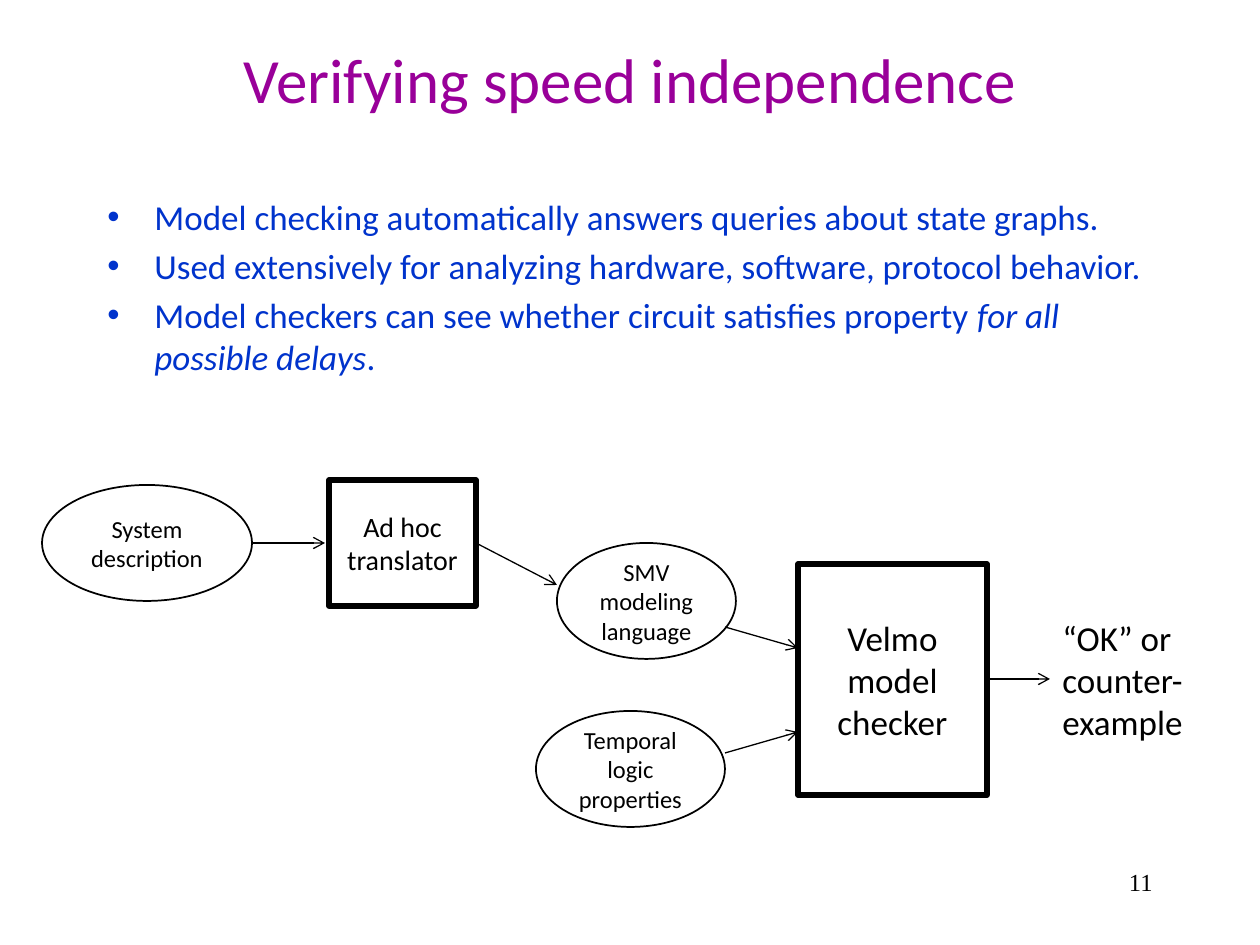
from dataclasses import dataclass

from lxml import etree
from pptx import Presentation
from pptx.dml.color import RGBColor
from pptx.enum.shapes import MSO_CONNECTOR, MSO_SHAPE
from pptx.enum.text import MSO_ANCHOR, PP_ALIGN
from pptx.oxml.ns import qn
from pptx.util import Emu, Pt

RECT, OVAL = MSO_SHAPE.RECTANGLE, MSO_SHAPE.OVAL
STRAIGHT = MSO_CONNECTOR.STRAIGHT
TOP, MIDDLE = MSO_ANCHOR.TOP, MSO_ANCHOR.MIDDLE
LEFT, CENTER, RIGHT = PP_ALIGN.LEFT, PP_ALIGN.CENTER, PP_ALIGN.RIGHT
PX = 914400 / 126


@dataclass(frozen=True)
class Theme:
    heading: RGBColor = RGBColor(0x99, 0x00, 0x99)
    bullet: RGBColor = RGBColor(0x00, 0x33, 0xCC)
    ink: RGBColor = RGBColor(0x00, 0x00, 0x00)
    font: str = "Calibri"
    number_font: str = "Times New Roman"
    title: int = 36
    body: int = 20
    tool: int = 16
    small: int = 14


theme = Theme()


def px(*lengths):
    return [Emu(round(length * PX)) for length in lengths]


def write(frame, paragraphs, size, color=theme.ink, align=LEFT, anchor=TOP, font=theme.font):
    """Fill a text frame; each paragraph is a list of (text, italic) runs."""
    frame.word_wrap = True
    frame.vertical_anchor = anchor
    for i, runs in enumerate(paragraphs):
        paragraph = frame.paragraphs[0] if i == 0 else frame.add_paragraph()
        paragraph.alignment = align
        paragraph.font.size = Pt(size)
        paragraph.font.name = font
        paragraph.font.color.rgb = color
        for text, italic in runs:
            run = paragraph.add_run()
            run.text = text
            if italic:
                run.font.italic = True


prs = Presentation()
prs.slide_width, prs.slide_height = px(1260, 945)
slide = prs.slides.add_slide(prs.slide_layouts[6])
shapes = slide.shapes

# Title, slide number and verdict
labels = [
    ("Verifying speed independence", (94, 10, 1072, 136),
     dict(size=theme.title, color=theme.heading, align=CENTER, anchor=MIDDLE)),
    ("11", (903, 861, 262, 63),
     dict(size=theme.small, align=RIGHT, font=theme.number_font)),
    ("“OK” or counter-example", (1050, 610, 157, 140), dict(size=theme.body)),
]
for text, box, style in labels:
    write(shapes.add_textbox(*px(*box)).text_frame, [[(text, False)]], **style)

# Bullets
points = [
    [("Model checking automatically answers queries about state graphs.", False)],
    [("Used extensively for analyzing hardware, software, protocol behavior.", False)],
    [("Model checkers can see whether circuit satisfies property ", False),
     ("for all possible delays", True), (".", False)],
]
body = shapes.add_textbox(*px(95, 189, 1071, 241)).text_frame
write(body, points, theme.body, theme.bullet)
indent, = px(47)
for paragraph in body.paragraphs:
    paragraph.space_before = Pt(theme.body * 0.2)
    properties = paragraph._p.get_or_add_pPr()
    properties.set("marL", str(indent))
    properties.set("indent", str(-indent))
    bullet_font = etree.Element(qn("a:buFont"), typeface="Arial")
    bullet_char = etree.Element(qn("a:buChar"), char="•")
    spacing = properties.find(qn("a:spcBef"))
    spacing.addnext(bullet_font)
    bullet_font.addnext(bullet_char)

# Tools are heavy rectangles, their inputs are thin ovals
nodes = [
    ("Ad hoc translator", RECT, (329, 480, 147, 126), theme.tool, 3),
    ("Velmo model checker", RECT, (798, 564, 189, 231), theme.body, 3),
    ("System description", OVAL, (42, 485, 210, 116), theme.small, 1),
    ("SMV modeling language", OVAL, (557, 543, 179, 116), theme.small, 1),
    ("Temporal logic properties", OVAL, (536, 711, 189, 116), theme.small, 1),
]
for text, outline, box, size, weight in nodes:
    node = shapes.add_shape(outline, *px(*box))
    node.shadow.inherit = False
    node.fill.background()
    node.line.color.rgb = theme.ink
    node.line.width = Pt(weight)
    write(node.text_frame, [[(text, False)]], size, align=CENTER, anchor=MIDDLE)

# Flow from description to verdict
flows = [
    (252, 543, 325, 543),
    (476, 543, 557, 585),
    (725, 627, 798, 648),
    (725, 753, 798, 732),
    (987, 679, 1050, 679),
]
for ends in flows:
    flow = shapes.add_connector(STRAIGHT, *px(*ends))
    flow.line.color.rgb = theme.ink
    flow.line.width = Pt(0.75)
    etree.SubElement(flow.line._get_or_add_ln(), qn("a:tailEnd"), type="arrow")
    etree.SubElement(flow._element.spPr, qn("a:effectLst"))

prs.save("out.pptx")
